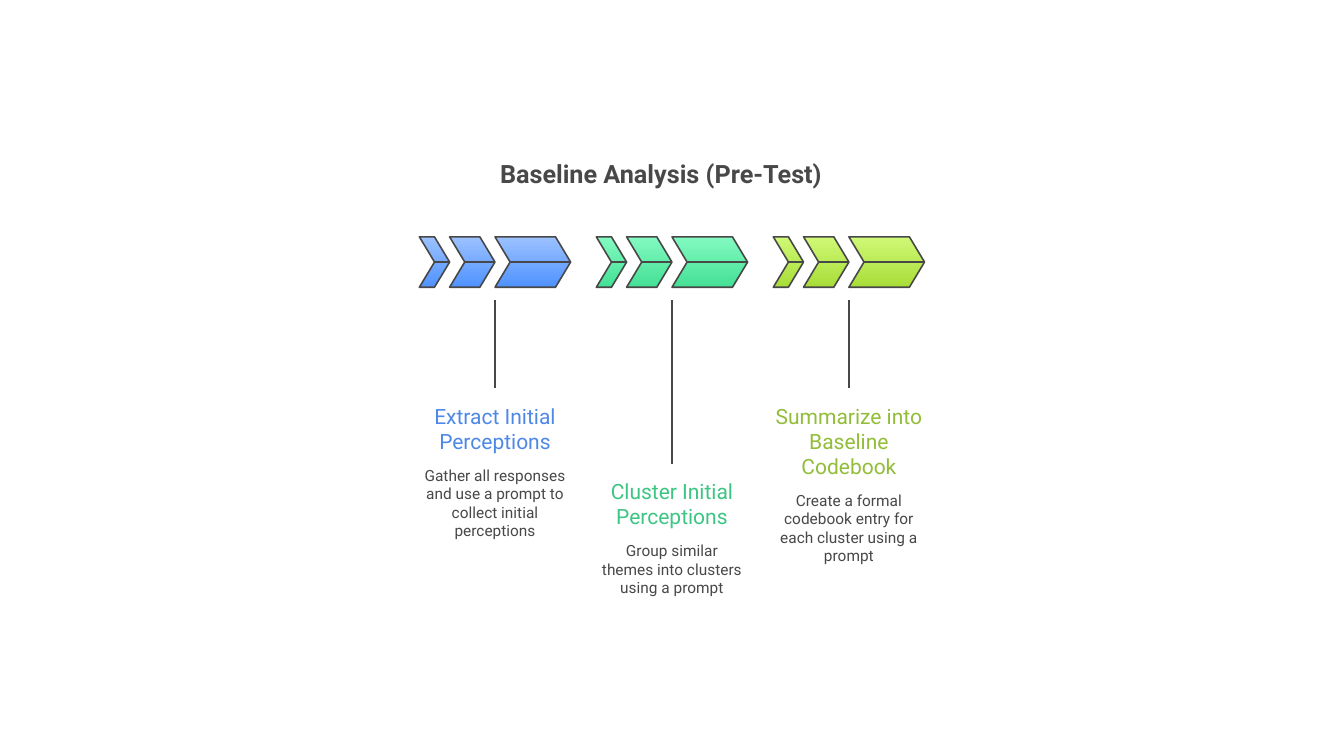
from copy import deepcopy

from pptx import Presentation
from pptx.dml.color import RGBColor as RGB
from pptx.enum.text import MSO_AUTO_SIZE as AutoSize, PP_ALIGN as Align
from pptx.util import Inches, Pt

COLORS = {
    "ink": "484848",
    "blue": "4E88E7", "blue_top": "9CC2FF", "blue_bottom": "4F92FF",
    "green": "3CC583", "green_top": "83FAC1", "green_bottom": "44E095",
    "lime": "92BD39", "lime_top": "CFF976", "lime_bottom": "A8DD38",
}
FONT = "Roboto"

# Arrow band: a grid of ten columns and two rows, three chevrons wide
UNIT, HALF = 0.15, 0.25
BAND_W = 10 * UNIT
BAND_LEFT, BAND_TOP, PITCH = 4.16, 2.35, 1.755
CHEVRONS = [(5, 5), (2, 3), (0, 2)]  # start column, columns spanned

HEADING_LINE, BODY_LINE = 0.25, 0.1875
STEM_GAP, TEXT_GAP = 0.13, 0.12

# Hue, stem end, heading width, heading lines, body width, body lines
STEPS = [
    ("blue", 3.85, 1.23, ["Extract Initial", "Perceptions"],
     1.45, ["Gather all responses", "and use a prompt to",
            "collect initial", "perceptions"]),
    ("green", 4.6, 1.27, ["Cluster Initial", "Perceptions"],
     1.44, ["Group similar", "themes into clusters", "using a prompt"]),
    ("lime", 3.85, 1.48, ["Summarize into", "Baseline", "Codebook"],
     1.42, ["Create a formal", "codebook entry for",
            "each cluster using a", "prompt"]),
]


def color(name):
    return RGB.from_string(COLORS[name])


def add_text(slide, box, lines, size, hue, bold=False, wrap=False):
    tf = slide.shapes.add_textbox(*map(Inches, box)).text_frame
    tf.margin_left = tf.margin_right = tf.margin_top = tf.margin_bottom = 0
    tf.word_wrap = wrap
    tf.auto_size = AutoSize.SHAPE_TO_FIT_TEXT
    p = tf.paragraphs[0]
    p.alignment = Align.CENTER
    for i, line in enumerate(lines):
        if i:
            # The break carries the same font as the run before it
            p.add_line_break()
            p._p[-1].append(deepcopy(r._r.rPr))
        r = p.add_run()
        r.text = line
        r.font.name, r.font.size, r.font.bold = FONT, Pt(size), bold
        r.font.color.rgb = color(hue)


def add_outline(slide, contours):
    """Draw contours, each a list of points and a closed flag, as one shape."""
    points = [([(Inches(x), Inches(y)) for x, y in pts], closed)
              for pts, closed in contours]
    builder = slide.shapes.build_freeform(*points[0][0][0])
    for i, (pts, closed) in enumerate(points):
        if i:
            builder.move_to(*pts[0])
        builder.add_line_segments(pts[1:], close=closed)
    s = builder.convert_to_shape()
    s.shadow.inherit = False
    return s


def chevron(left, top, start, span):
    x = left + start * UNIT
    tip = x + span * UNIT
    mid, bottom = top + HALF, top + 2 * HALF
    return [(x, top), (tip - UNIT, top), (tip, mid),
            (tip - UNIT, bottom), (x, bottom), (x + UNIT, mid)]


def add_arrows(slide, left, top, stem_end, hue):
    chevrons = [(chevron(left, top, *c), True) for c in CHEVRONS]

    # Gradient bodies
    s = add_outline(slide, chevrons)
    s.fill.gradient()
    s.fill.gradient_angle = 270
    for stop, end in zip(s.fill.gradient_stops, ("top", "bottom")):
        stop.color.rgb = color(f"{hue}_{end}")
    s.line.fill.background()

    # Outlines, centre folds and stem
    folds = [([pts[5], pts[2]], False) for pts, _ in chevrons]
    axis = left + BAND_W / 2
    stem = ([(axis, top + 2 * HALF + STEM_GAP), (axis, stem_end)], False)
    s = add_outline(slide, chevrons + folds + [stem])
    s.fill.background()
    s.line.color.rgb = color("ink")
    s.line.width = Pt(1.12)


def add_step(slide, left, top, step):
    hue, stem_end, head_w, heading, body_w, body = step
    add_arrows(slide, left, top, stem_end, hue)
    axis = left + BAND_W / 2
    head_top = stem_end + 0.15
    head_h = len(heading) * HEADING_LINE
    add_text(slide, (axis - head_w / 2, head_top, head_w, head_h),
             heading, 15, hue)
    add_text(slide, (axis - body_w / 2, head_top + head_h + TEXT_GAP,
                     body_w, len(body) * BODY_LINE), body, 11, "ink")


def main():
    prs = Presentation()
    prs.slide_width, prs.slide_height = Inches(13.33), Inches(7.5)
    slide = prs.slides.add_slide(prs.slide_layouts[6])

    # Title
    add_text(slide, (4.83, 1.57, 3.45, 0.3), ["Baseline Analysis (Pre-Test)"],
             18, "ink", bold=True, wrap=True)

    # Three steps
    for i, step in enumerate(STEPS):
        add_step(slide, BAND_LEFT + i * PITCH, BAND_TOP, step)

    prs.save("out.pptx")


if __name__ == "__main__":
    main()
